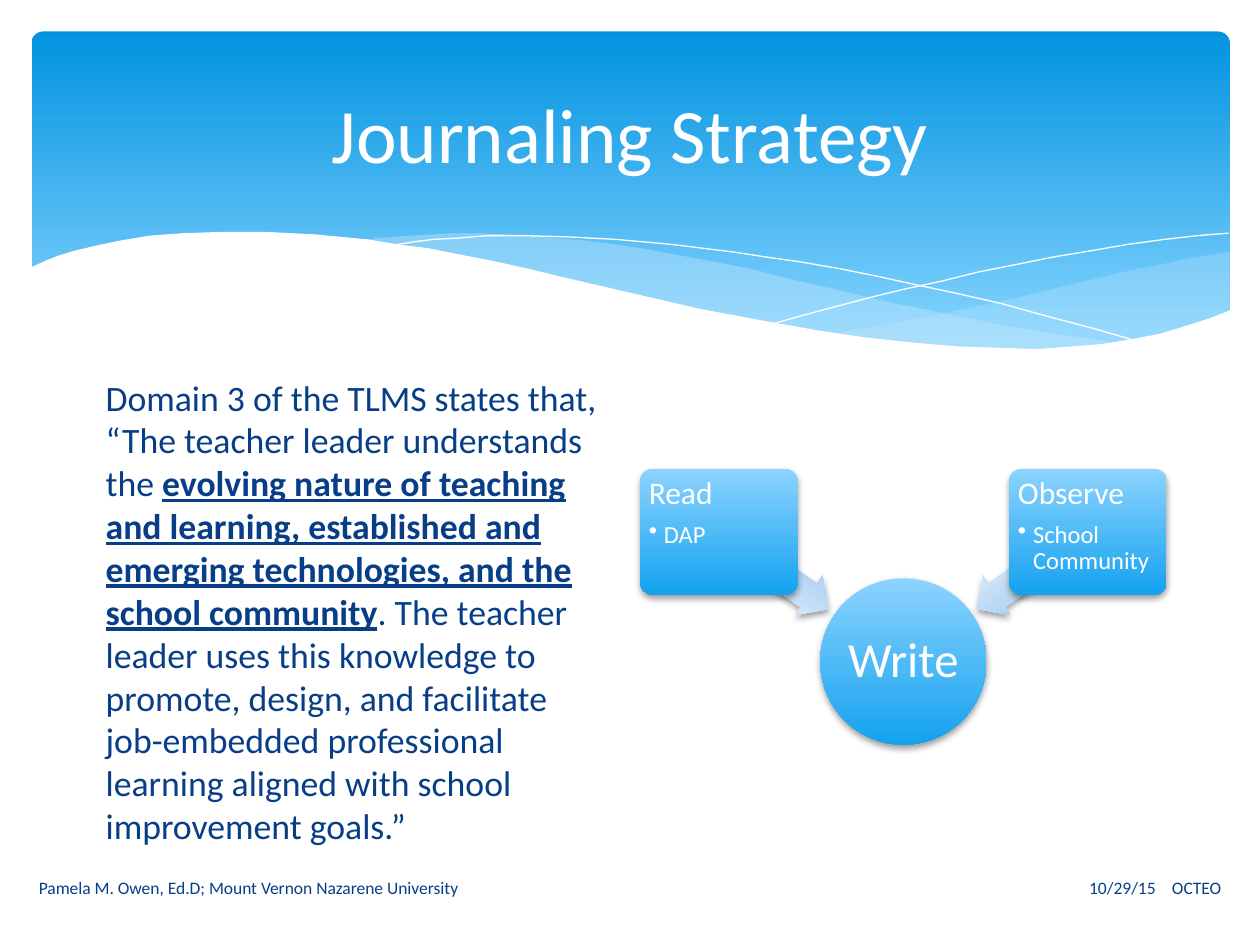
import lxml.etree
import pptx
import pptx.dml.color
import pptx.enum.shapes
import pptx.enum.text
import pptx.oxml.ns
import pptx.util

PX = 9144
SHAPE = pptx.enum.shapes.MSO_SHAPE
ALIGN = pptx.enum.text.PP_ALIGN
ANCHOR = pptx.enum.text.MSO_ANCHOR
qn = pptx.oxml.ns.qn


def color(value):
    return pptx.dml.color.RGBColor.from_string(value)


def add_gradient_shape(kind, box, colors, end=1, shadow=True):
    shape = slide.shapes.add_shape(kind, *[PX * length for length in box])
    shape.line.fill.background()
    shape.fill.gradient()
    shape.fill.gradient_angle = 270
    for stop, value, position in zip(shape.fill.gradient_stops, colors, (0, end)):
        stop.color.rgb = color(value)
        stop.position = position
    shape.shadow.inherit = False
    if shadow:
        effects = shape.element.spPr.find(qn("a:effectLst"))
        outer = lxml.etree.SubElement(effects, qn("a:outerShdw"), blurRad="50800",
                                      dist="25400", dir="5400000", rotWithShape="0")
        black = lxml.etree.SubElement(outer, qn("a:srgbClr"), val="000000")
        lxml.etree.SubElement(black, qn("a:alpha"), val="38000")
    return shape


presentation = pptx.Presentation()
presentation.slide_width = 1000 * PX
presentation.slide_height = 750 * PX
slide = presentation.slides.add_slide(presentation.slide_layouts[5])

banner = add_gradient_shape(SHAPE.ROUNDED_RECTANGLE, (25, 25, 951, 270),
                            ("0293E0", "83D3FE"), end=0.9, shadow=False)
banner.adjustments[0] = 0.034

right_wave = [
    (976, 200), (948, 204), (921, 210), (891, 216), (861, 223), (805, 237), (753, 248),
    (706, 257), (661, 265), (691, 269), (719, 271), (745, 275), (769, 277), (803, 278),
    (835, 277), (863, 275), (889, 272), (913, 267), (935, 262), (949, 257), (976, 247)]
middle_wave = [
    (893, 273), (866, 269), (837, 265), (807, 260), (775, 254), (741, 247), (706, 240),
    (668, 231), (629, 222), (598, 214), (569, 208), (541, 203), (514, 198), (489, 194),
    (465, 191), (442, 189), (420, 187), (399, 186), (380, 185), (361, 185), (344, 186),
    (328, 187), (313, 188), (299, 189), (286, 191), (323, 196), (362, 203), (404, 211),
    (449, 222), (530, 240), (601, 255), (650, 264), (695, 270), (736, 275), (773, 277),
    (807, 278), (848, 277), (893, 273)]
falling_line = [
    (309, 195), (328, 192), (344, 190), (363, 189), (387, 187), (416, 187), (450, 188),
    (489, 190), (533, 194), (582, 200), (608, 204), (636, 208), (665, 213), (695, 219),
    (727, 226), (760, 233), (795, 241), (831, 251), (869, 261), (907, 272)]
rising_line = [
    (613, 257), (653, 246), (695, 235), (720, 229), (748, 223), (776, 216), (806, 210),
    (836, 204), (866, 199), (895, 194), (924, 190), (951, 187), (975, 185)]
white_wave = [
    (977, 246), (959, 253), (940, 259), (920, 265), (899, 269), (875, 273), (850, 275),
    (823, 277), (793, 276), (761, 275), (726, 272), (688, 268), (648, 262), (603, 254),
    (555, 245), (503, 233), (447, 220), (418, 213), (391, 207), (365, 202), (340, 197),
    (316, 194), (292, 190), (271, 188), (250, 186), (230, 185), (211, 184), (177, 184),
    (146, 185), (119, 187), (95, 191), (76, 195), (59, 199), (46, 203), (36, 207),
    (23, 213), (23, 329), (977, 329)]

for points, fill, alpha in (
        (right_wave, "C6E7FC", 29), (middle_wave, "C6E7FC", 40), (falling_line, None, 100),
        (rising_line, None, 100), (white_wave, "FFFFFF", 100)):
    builder = slide.shapes.build_freeform(*points[0], scale=PX)
    builder.add_line_segments(points[1:], close=fill is not None)
    wave = builder.convert_to_shape()
    wave.shadow.inherit = False
    if fill:
        wave.line.fill.background()
        wave.fill.solid()
        wave.fill.fore_color.rgb = color(fill)
        fill_color = wave.element.spPr.find(qn("a:solidFill"))[0]
        lxml.etree.SubElement(fill_color, qn("a:alpha"), val=str(alpha * 1000))
    else:
        wave.fill.background()
        wave.line.color.rgb = color("FFFFFF")
        wave.line.width = 0

title = slide.shapes.title
slide.shapes.element.append(title.element)
title.left, title.top, title.width, title.height = [PX * n for n in (50, 37, 900, 137)]
title.text_frame.text = "Journaling Strategy"
title.text_frame.vertical_anchor = ANCHOR.MIDDLE
title.text_frame.paragraphs[0].alignment = ALIGN.CENTER
title_font = title.text_frame.paragraphs[0].runs[0].font
title_font.name = "Calibri"
title_font.size = pptx.util.Pt(44)
title_font.color.rgb = color("FFFFFF")

body_runs = (
    "Domain 3 of the TLMS states that, “The teacher leader understands the ",
    "evolving nature of teaching and learning, established and emerging technologies, "
    "and the school community",
    ". The teacher leader uses this knowledge to promote, design, and facilitate "
    "job-embedded professional learning aligned with school improvement goals.”")
for box, texts, size, anchor, alignment in (
        ((74, 293, 418, 377), body_runs, 20.4, ANCHOR.TOP, ALIGN.LEFT),
        ((800, 684, 127, 40), ("10/29/15",), 10, ANCHOR.MIDDLE, ALIGN.RIGHT),
        ((900, 684, 79, 40), ("OCTEO",), 10, ANCHOR.MIDDLE, ALIGN.RIGHT),
        ((21, 684, 414, 40), ("Pamela M. Owen, Ed.D; Mount Vernon Nazarene University",),
         10, ANCHOR.MIDDLE, ALIGN.LEFT)):
    frame = slide.shapes.add_textbox(*[PX * length for length in box]).text_frame
    frame.word_wrap = True
    frame.vertical_anchor = anchor
    paragraph = frame.paragraphs[0]
    paragraph.alignment = alignment
    for index, text in enumerate(texts):
        run = paragraph.add_run()
        run.text = text
        run.font.name = "Calibri"
        run.font.size = pptx.util.Pt(size)
        run.font.color.rgb = color("073E87")
        run.font.bold = run.font.underline = index == 1

blues = ("8CD3FF", "14A2EF")
circle = add_gradient_shape(SHAPE.OVAL, (651, 459, 132, 132), blues)
nodes = [(circle, ("Write",), (28,), 2, ANCHOR.MIDDLE, ALIGN.CENTER)]
for card_left, arrow_left, rotation, texts in (
        (508, 561, 215, ("Read", "DAP")),
        (801, 766, 325, ("Observe", "School Community"))):
    arrow = add_gradient_shape(SHAPE.LEFT_ARROW, (arrow_left, 434, 106, 38),
                               ("FFFFFF", "82B9EC"))
    arrow.adjustments[0] = 0.6
    arrow.adjustments[1] = 0.5
    arrow.rotation = rotation
    card = add_gradient_shape(SHAPE.ROUNDED_RECTANGLE, (card_left, 372, 125, 100), blues)
    card.adjustments[0] = 0.1
    nodes.append((card, texts, (18, 14), 4, ANCHOR.TOP, ALIGN.LEFT))

for shape, texts, sizes, inset, anchor, alignment in nodes:
    frame = shape.text_frame
    frame.text = "\n".join(texts)
    frame.word_wrap = True
    frame.vertical_anchor = anchor
    frame.margin_left = frame.margin_right = inset * PX
    frame.margin_top = frame.margin_bottom = inset * PX
    for level, (paragraph, size) in enumerate(zip(frame.paragraphs, sizes)):
        paragraph.alignment = alignment
        paragraph.line_spacing = 0.9
        paragraph.space_after = pptx.util.Pt(2 if level else 6)
        font = paragraph.runs[0].font
        font.name = "Calibri"
        font.size = pptx.util.Pt(size)
        font.color.rgb = color("FFFFFF")
        if level:
            paragraph.level = level
            properties = paragraph._p.get_or_add_pPr()
            properties.set("marL", str(12 * PX))
            properties.set("indent", str(-12 * PX))
            lxml.etree.SubElement(properties, qn("a:buChar"), char="•")

presentation.save("out.pptx")
